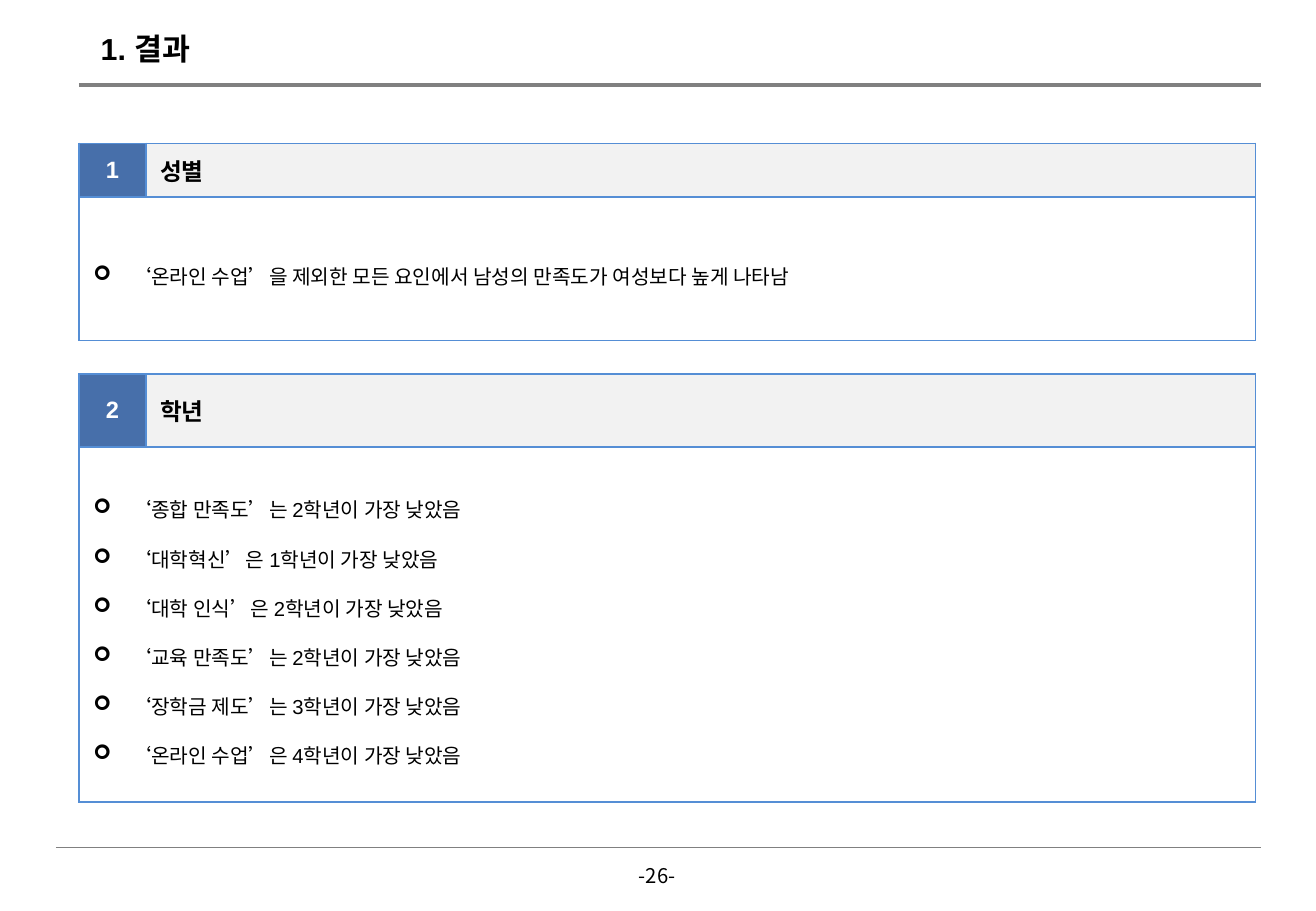
from lxml import etree
from pptx import Presentation
from pptx import util as u
from pptx.dml.color import RGBColor
from pptx.enum import shapes, text
from pptx.oxml import ns

BLACK = RGBColor(0x00, 0x00, 0x00)
WHITE = RGBColor(0xFF, 0xFF, 0xFF)
GREY = RGBColor(0x80, 0x80, 0x80)
PALE = RGBColor(0xF2, 0xF2, 0xF2)
BLUE = RGBColor(0x47, 0x6F, 0xAA)
BORDER = RGBColor(0x55, 0x8E, 0xD5)
KOREAN = "Noto Sans CJK KR"
LATIN = "Arial"


class Deck:
    """Holds the style and the current slide."""

    left = 1.65
    columns = (1.4, 23.2)

    def __init__(self, width, height):
        self.prs = Presentation()
        self.prs.slide_width = u.Cm(width)
        self.prs.slide_height = u.Cm(height)
        self.s = self.prs.slides.add_slide(self.prs.slide_layouts[5])

    def add_words(self, p, words, size, color=BLACK, name=LATIN, bold=False):
        r = p.add_run()
        r.text = words
        for key, value in dict(size=u.Pt(size), bold=bold, name=name).items():
            setattr(r.font, key, value)
        r.font.color.rgb = color
        ea = etree.SubElement(r._r.get_or_add_rPr(), ns.qn("a:ea"))
        ea.set("typeface", KOREAN)

    def place(self, sp, x, y, w, h):
        box = dict(left=x, top=y, width=w, height=h)
        for key, value in box.items():
            setattr(sp, key, u.Cm(value))
        tf = sp.text_frame
        frame = dict(word_wrap=False, auto_size=text.MSO_AUTO_SIZE.NONE,
                     vertical_anchor=text.MSO_ANCHOR.MIDDLE)
        for key, value in frame.items():
            setattr(tf, key, value)
        return tf.paragraphs[0]

    def title(self, words, *box):
        p = self.place(self.s.shapes.title, *box)
        p.alignment = text.PP_ALIGN.LEFT
        self.add_words(p, words, 18, bold=True)

    def page_number(self, words, *box):
        sp = self.s.shapes.add_textbox(0, 0, 0, 0)
        p = self.place(sp, *box)
        p.alignment = text.PP_ALIGN.CENTER
        self.add_words(p, words, 12, name=KOREAN)

    def rule(self, x1, x2, y, width):
        line = self.s.shapes.add_connector(
            shapes.MSO_CONNECTOR.STRAIGHT, u.Cm(x1), u.Cm(y), u.Cm(x2), u.Cm(y))
        line.line.color.rgb = GREY
        line.line.width = u.Pt(width)
        etree.SubElement(line._element.spPr, ns.qn("a:effectLst"))

    def style_cell(self, cell, fill):
        layout = dict(vertical_anchor=text.MSO_ANCHOR.MIDDLE,
                      margin_left=u.Cm(0.3), margin_right=u.Cm(0.3),
                      margin_top=u.Cm(0.2), margin_bottom=u.Cm(0.2))
        for key, value in layout.items():
            setattr(cell, key, value)
        tc_pr = cell._tc.get_or_add_tcPr()
        for side in ("lnL", "lnR", "lnT", "lnB"):
            ln = etree.SubElement(tc_pr, ns.qn(f"a:{side}"), w=str(u.Pt(1)))
            solid = etree.SubElement(ln, ns.qn("a:solidFill"))
            etree.SubElement(solid, ns.qn("a:srgbClr"), val=str(BORDER))
        cell.fill.solid()
        cell.fill.fore_color.rgb = fill

    def bullet(self, p, words, name, first):
        p.line_spacing = 1.5
        p.space_before = u.Pt(0 if first else 3)
        p_pr = p._p.get_or_add_pPr()
        p_pr.set("marL", str(u.Cm(0.79)))
        p_pr.set("indent", str(u.Cm(-0.79)))
        etree.SubElement(p_pr, ns.qn("a:buFont"), typeface="Wingdings")
        etree.SubElement(p_pr, ns.qn("a:buChar"), char="➢")
        self.add_words(p, words, 12, name=name)

    def section(self, number, heading, findings, top, rows, name=LATIN):
        frame = self.s.shapes.add_table(
            2, 2, u.Cm(self.left), u.Cm(top), u.Cm(sum(self.columns)), u.Cm(sum(rows)))
        table = frame.table
        table.horz_banding = False
        for column, width in zip(table.columns, self.columns):
            column.width = u.Cm(width)
        for row, height in zip(table.rows, rows):
            row.height = u.Cm(height)
        table.cell(1, 0).merge(table.cell(1, 1))
        for cell, fill in zip(table.iter_cells(), (BLUE, PALE, WHITE, WHITE)):
            self.style_cell(cell, fill)

        p = table.cell(0, 0).text_frame.paragraphs[0]
        p.alignment = text.PP_ALIGN.CENTER
        self.add_words(p, number, 14, WHITE, bold=True)
        self.add_words(table.cell(0, 1).text_frame.paragraphs[0], heading, 14, bold=True)

        tf = table.cell(1, 0).text_frame
        for i, finding in enumerate(findings):
            p = tf.add_paragraph() if i else tf.paragraphs[0]
            self.bullet(p, finding, name, first=i == 0)


def main():
    deck = Deck(27.51, 19.05)

    # Heading and footer
    deck.rule(1.65, 26.37, 1.78, 2)
    deck.rule(1.17, 26.37, 17.73, 0.5)
    deck.title("1. 결과", 1.85, 0.51, 2.57, 1.02)
    deck.page_number("-26-", 13.08, 17.93, 1.32, 0.76)

    # Results by gender
    deck.section("1", "성별",
                 ["‘온라인 수업’을 제외한 모든 요인에서 남성의 만족도가 여성보다 높게 나타남"],
                 top=3, rows=(1.12, 3), name="Calibri")

    # Results by school year
    lowest = [("‘종합 만족도’는", 2), ("‘대학혁신’은", 1), ("‘대학 인식’은", 2),
              ("‘교육 만족도’는", 2), ("‘장학금 제도’는", 3), ("‘온라인 수업’은", 4)]
    deck.section("2", "학년",
                 [f"{factor} {year}학년이 가장 낮았음" for factor, year in lowest],
                 top=7.82, rows=(1.53, 7.42))

    deck.prs.save("out.pptx")


if __name__ == "__main__":
    main()
